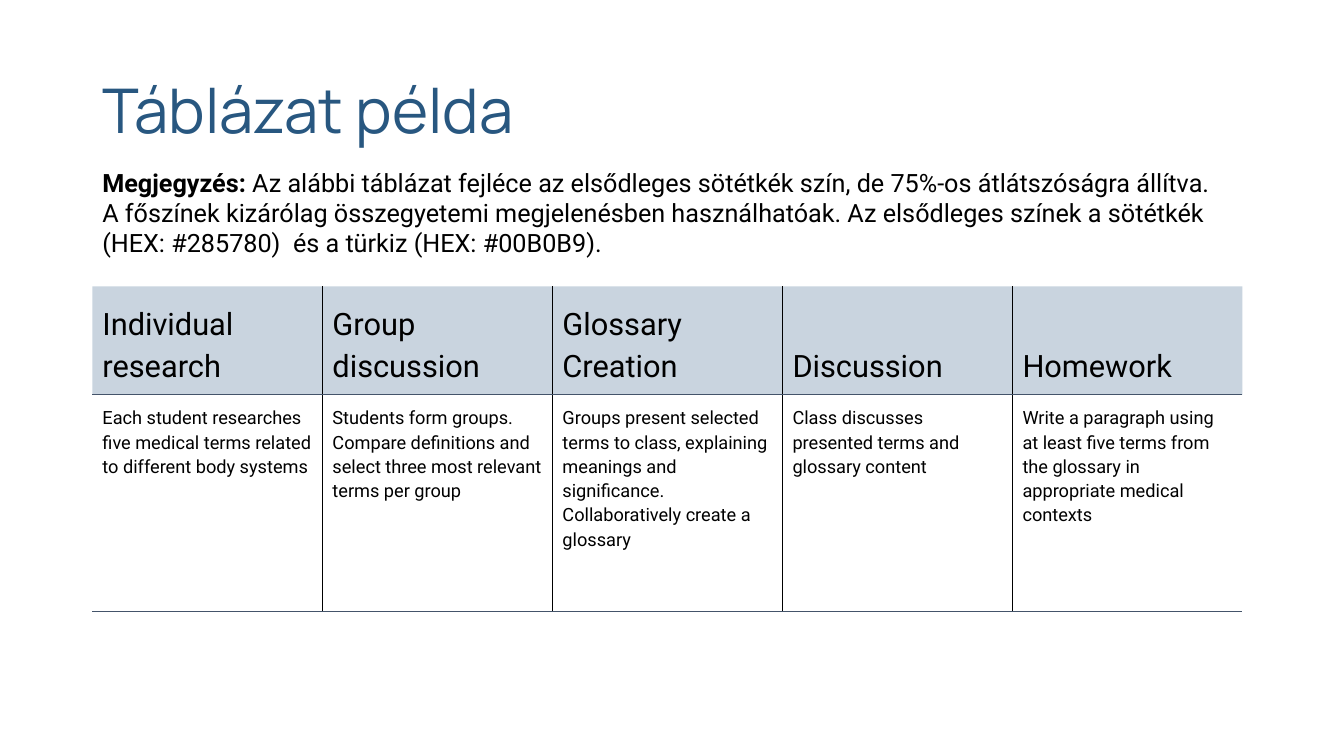
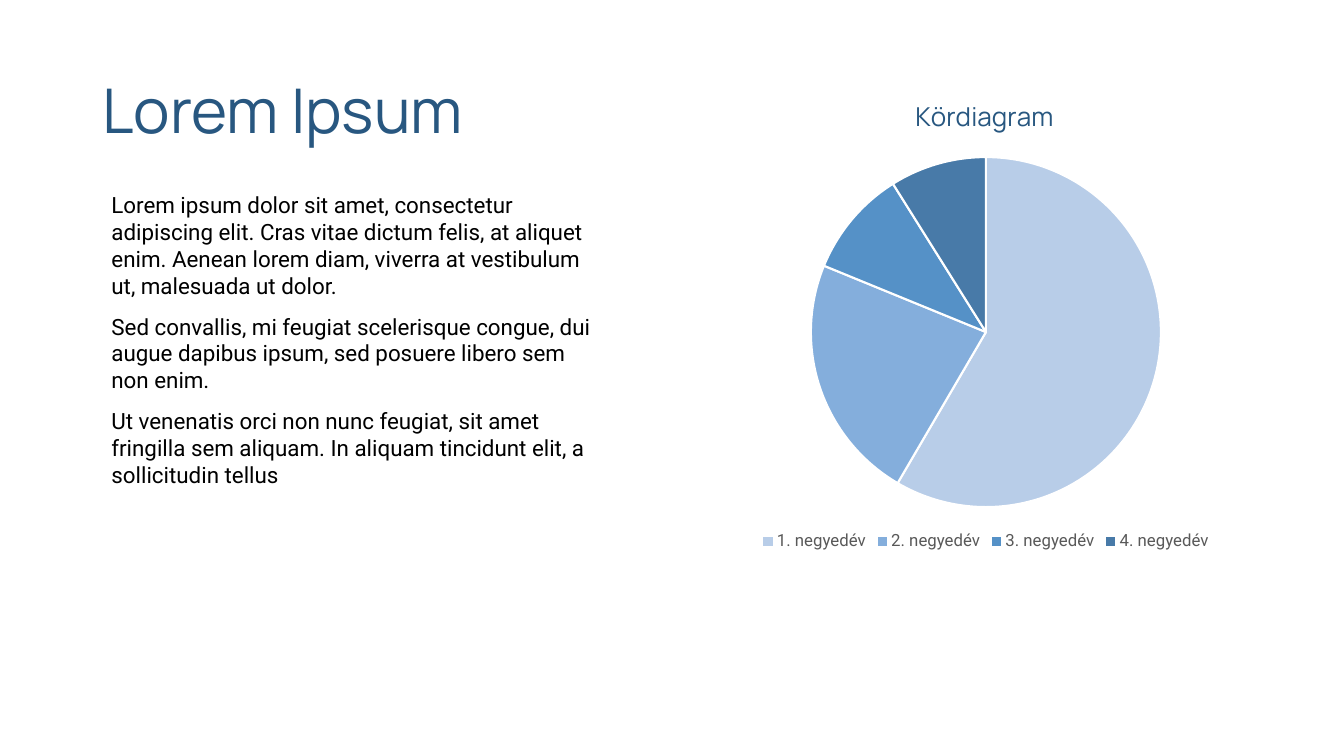
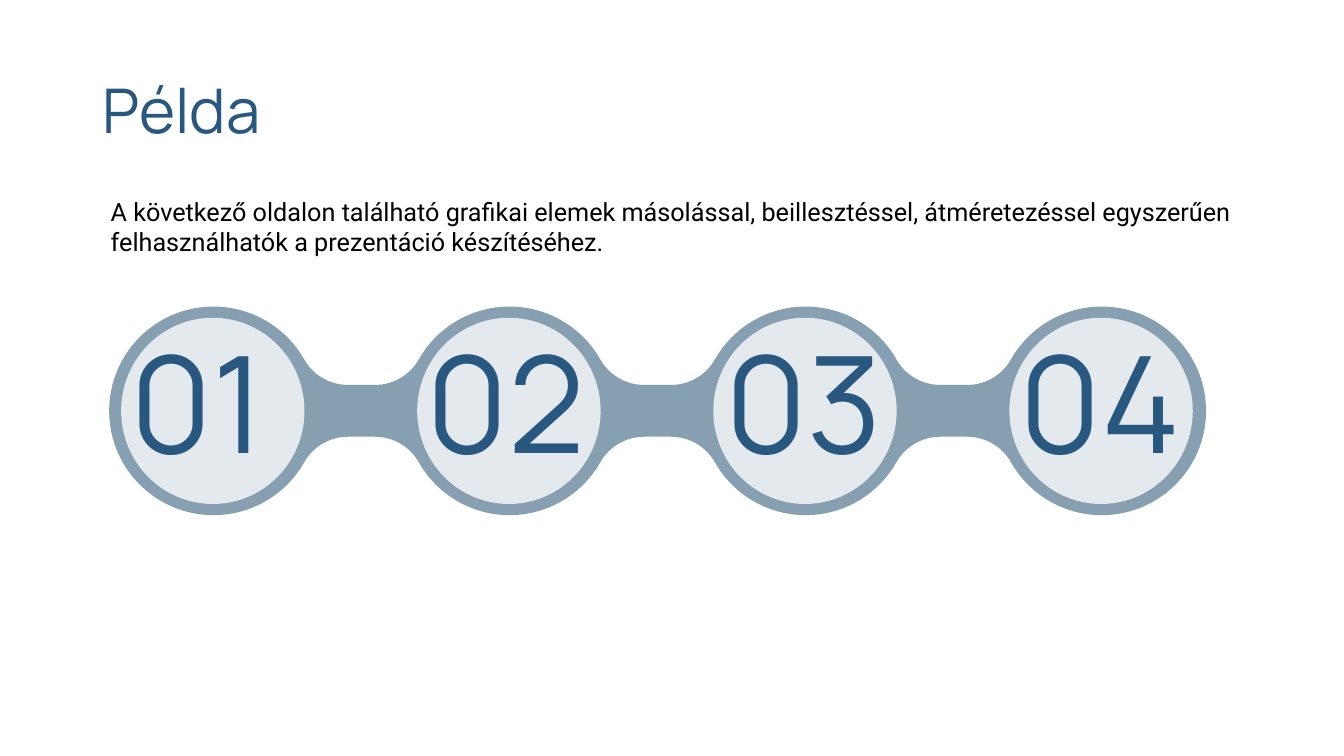
from dataclasses import dataclass
from math import atan2, cos, degrees, radians, sin, sqrt, tan

from lxml.etree import SubElement
from pptx import Presentation
from pptx.chart.data import CategoryChartData
from pptx.dml.color import RGBColor
from pptx.enum.chart import XL_CHART_TYPE, XL_LEGEND_POSITION
from pptx.enum.shapes import MSO_SHAPE
from pptx.enum.text import MSO_ANCHOR
from pptx.oxml import parse_xml
from pptx.oxml.ns import nsdecls, qn
from pptx.util import Emu, Pt

# Shared style
EMU_PER_PX = 6350
INSET = Pt(7.2)
HEADING_FONT, BODY_FONT = "Manrope", "Roboto"
NAVY, BLACK, WHITE, GREY = "285780", "000000", "FFFFFF", "595959"
RULE, CHAIN, DISC = "44546A", "869FB1", "E3E9ED"
PIE_COLOURS = ["B8CDE8", "84AEDC", "5591C7", "487AA8"]


@dataclass(frozen=True)
class Area:
    left: int
    top: int
    width: int
    height: int

    def emu(self) -> list[Emu]:
        return [px(v) for v in (self.left, self.top, self.width, self.height)]


@dataclass(frozen=True)
class Step:
    heading: str
    details: tuple[str, ...]


TITLE_AREA = Area(132, 58, 1656, 209)

STEPS = [
    Step("Individual research",
         ("Each student researches five medical terms related to different body systems",)),
    Step("Group discussion",
         ("Students form groups.",
          "Compare definitions and select three most relevant terms per group")),
    Step("Glossary Creation",
         ("Groups present selected terms to class, explaining meanings and significance.",
          "Collaboratively create a glossary")),
    Step("Discussion", ("Class discusses presented terms and glossary content",)),
    Step("Homework",
         ("Write a paragraph using at least five terms from the glossary in appropriate "
          "medical contexts",)),
]

NUMBER_AREAS = [
    Area(173, 513, 261, 144),
    Area(595, 514, 289, 144),
    Area(1022, 513, 261, 144),
    Area(1443, 514, 261, 144),
]


def px(value: float) -> Emu:
    return Emu(round(value * EMU_PER_PX))


def colour(value: str) -> RGBColor:
    return RGBColor.from_string(value)


def style_font(font, *, size: float, face: str, ink: str, bold: bool = False) -> None:
    font.size, font.name, font.bold = Pt(size), face, bold
    font.color.rgb = colour(ink)


def write(frame, paragraphs, *, size: float, face: str = BODY_FONT, ink: str = BLACK,
          lead: str = "", spacing: float = 1.0, before: int = 0) -> None:
    """Fill a text frame; lead is a bold opening of the first paragraph."""
    for index, text in enumerate(paragraphs):
        para = frame.add_paragraph() if index else frame.paragraphs[0]
        para.line_spacing = spacing
        para.space_before = Pt(before if index else 0)
        parts = [(text, False)]
        if lead and index == 0:
            parts.insert(0, (lead, True))
        for part, bold in parts:
            span = para.add_run()
            span.text = part
            style_font(span.font, size=size, face=face, ink=ink, bold=bold)


def add_text(page, area: Area, *paragraphs: str, anchor=MSO_ANCHOR.TOP,
             inset: int = INSET, **text_format) -> None:
    frame = page.shapes.add_textbox(*area.emu()).text_frame
    frame.word_wrap = True
    frame.vertical_anchor = anchor
    frame.margin_left = frame.margin_right = INSET
    frame.margin_top = frame.margin_bottom = inset
    write(frame, paragraphs, **text_format)


def add_page(deck, title: str):
    page = deck.slides.add_slide(deck.slide_layouts[6])
    add_text(page, TITLE_AREA, title, size=44, face=HEADING_FONT, ink=NAVY,
             spacing=0.9, anchor=MSO_ANCHOR.MIDDLE, inset=INSET // 2)
    return page


def paint(shape, fill: str) -> None:
    shape.shadow.inherit = False
    shape.fill.solid()
    shape.fill.fore_color.rgb = colour(fill)
    shape.line.fill.background()


# Table
def set_borders(cell, **edges: str | None) -> None:
    """Draw the edges L, R, T, B in the given colours; None hides an edge."""
    properties = cell._tc.get_or_add_tcPr()
    for side in "LRTB":
        line = SubElement(properties, qn(f"a:ln{side}"), w=str(Pt(0.75)))
        ink = edges.get(side)
        if ink is None:
            SubElement(line, qn("a:noFill"))
        else:
            SubElement(SubElement(line, qn("a:solidFill")), qn("a:srgbClr"), val=ink)


def fill_cell(cell, fill: str, opacity: int = 100) -> None:
    cell.fill.solid()
    cell.fill.fore_color.rgb = colour(fill)
    if opacity < 100:
        tint = cell._tc.tcPr.find(qn("a:solidFill")).find(qn("a:srgbClr"))
        SubElement(tint, qn("a:alpha"), val=str(opacity * 1000))


def add_step_table(page) -> None:
    row_heights = (155, 66, 66, 177)
    area = Area(132, 409, 1643, sum(row_heights))
    table = page.shapes.add_table(len(row_heights), len(STEPS), *area.emu()).table
    table.first_row = table.horz_banding = False
    for row, height in zip(table.rows, row_heights):
        row.height = px(height)
    last_row, last_column = len(row_heights) - 1, len(STEPS) - 1
    for column, step in enumerate(STEPS):
        table.columns[column].width = px(area.width / len(STEPS))
        for row in range(len(row_heights)):
            cell = table.cell(row, column)
            cell.margin_left = cell.margin_right = INSET
            cell.margin_top = cell.margin_bottom = INSET
            set_borders(cell,
                        L=BLACK if column else None,
                        R=BLACK if column < last_column else None,
                        T=RULE if row else None,
                        B=RULE)
            fill_cell(cell, WHITE if row else NAVY, 100 if row else 25)
        header, body = table.cell(0, column), table.cell(1, column)
        header.vertical_anchor = MSO_ANCHOR.BOTTOM
        write(header.text_frame, [step.heading], size=22, spacing=1.15)
        body.merge(table.cell(last_row, column))
        write(body.text_frame, step.details, size=13, spacing=1.15)


# Chart
def set_layout(parent, after: str, target: str = "", **fractions: float) -> None:
    """Place a chart part at fractions of the chart area."""
    old = parent.find(qn("c:layout"))
    if old is not None:
        parent.remove(old)
    inner = f'<c:layoutTarget val="{target}"/>' if target else ""
    modes = "".join(f'<c:{key}Mode val="edge"/>' for key in "xy")
    values = "".join(f'<c:{key} val="{value}"/>' for key, value in fractions.items())
    layout = parse_xml(f'<c:layout {nsdecls("c")}><c:manualLayout>{inner}{modes}{values}'
                       "</c:manualLayout></c:layout>")
    if after:
        parent.find(qn(after)).addnext(layout)
    else:
        parent.insert(0, layout)


def add_quarter_pie(page) -> None:
    data = CategoryChartData()
    data.categories = [f"{number}. negyedév" for number in range(1, 5)]
    data.add_series("Series 1", (59, 23, 10, 9))
    area = Area(960, 108, 897, 685)
    chart = page.shapes.add_chart(XL_CHART_TYPE.PIE, *area.emu(), data).chart
    style_font(chart.font, size=10, face="Calibri", ink=BLACK)

    chart.has_title = True
    write(chart.chart_title.text_frame, ["Kördiagram"], size=18.6,
          face=HEADING_FONT, ink=NAVY)
    chart.chart_title.include_in_layout = False
    set_layout(chart.chart_title._element, "c:tx", x=0.38, y=0.03)

    chart.has_legend = True
    chart.legend.position = XL_LEGEND_POSITION.BOTTOM
    chart.legend.include_in_layout = False
    style_font(chart.legend.font, size=12, face=BODY_FONT, ink=GREY)

    plot = chart.plots[0]
    plot.vary_by_categories = True
    set_layout(plot._element.getparent(), "", "inner", x=0.22, y=0.17, w=0.56, h=0.73)
    for index, fill in enumerate(PIE_COLOURS):
        look = plot.series[0].points[index].format
        look.fill.solid()
        look.fill.fore_color.rgb = colour(fill)
        look.line.color.rgb = colour(WHITE)
        look.line.width = Pt(1.5)


# Chain of numbered discs
def arc(x: float, y: float, radius: float, start: float, stop: float):
    """One Bézier arc as four points; degrees run counterclockwise from the right."""
    first, last = radians(start), radians(stop)
    handle = 4 / 3 * tan((last - first) / 4)
    return [(x + radius * (cos(angle) - pull * sin(angle)),
             y - radius * (sin(angle) + pull * cos(angle)))
            for angle, pull in ((first, 0), (first, handle), (last, -handle), (last, 0))]


def join(curve: list, piece: list) -> None:
    """Continue a Bézier curve with a piece, by a straight stretch if they are apart."""
    if curve:
        end, start = curve[-1], piece[0]
        if max(abs(end[0] - start[0]), abs(end[1] - start[1])) > 1:
            curve += [end, start, start]
        piece = piece[1:]
    curve += piece


def add_curve(page, points: list):
    """Draw a closed outline from a start point and three points per Bézier curve."""
    corners = [(px(x), px(y)) for x, y in points]
    builder = page.shapes.build_freeform(*corners[0], scale=1.0)
    builder.add_line_segments(corners[1:], close=True)
    shape = builder.convert_to_shape()
    lines = list(shape._element.iter(qn("a:lnTo")))
    for trio in zip(lines[::3], lines[1::3], lines[2::3]):
        bezier = trio[0].makeelement(qn("a:cubicBezTo"))
        trio[0].addprevious(bezier)
        for line in trio:
            bezier.append(line[0])
            line.getparent().remove(line)
    return shape


def add_chain(page) -> None:
    first_x, middle_y, pitch = 305, 587, 423
    radius, neck, fillet = 149, 37, 72

    # Each fillet touches both a circle and the straight neck
    rise = neck + fillet
    reach = sqrt((radius + fillet) ** 2 - rise ** 2)
    tangent = degrees(atan2(rise, reach))
    upper = []
    last = len(NUMBER_AREAS) - 1
    for index in range(last + 1):
        x = first_x + pitch * index
        if index > 0:
            join(upper, arc(x - reach, middle_y - rise, fillet, 270, 360 - tangent))
        join(upper, arc(x, middle_y, radius, 180 - tangent if index else 180, 90))
        join(upper, arc(x, middle_y, radius, 90, tangent if index < last else 0))
        if index < last:
            join(upper, arc(x + reach, middle_y - rise, fillet, 180 + tangent, 270))
    lower = [(x, 2 * middle_y - y) for x, y in reversed(upper)]
    paint(add_curve(page, upper + lower[1:]), CHAIN)

    for index in range(last + 1):
        area = Area(173 + pitch * index, 454, 262, 266)
        paint(page.shapes.add_shape(MSO_SHAPE.OVAL, *area.emu()), DISC)
    for number, area in enumerate(NUMBER_AREAS, start=1):
        add_text(page, area, f"{number:02}", size=96, face=HEADING_FONT, ink=NAVY,
                 spacing=0.9, anchor=MSO_ANCHOR.MIDDLE)


# Slides
def build_table_page(deck) -> None:
    page = add_page(deck, "Táblázat példa")
    add_text(page, Area(132, 224, 1643, 154),
             "Az alábbi táblázat fejléce az elsődleges sötétkék szín, de 75%-os "
             "átlátszóságra állítva. A főszínek kizárólag összegyetemi megjelenésben "
             "használhatóak. Az elsődleges színek a sötétkék (HEX: #285780)  és a türkiz "
             "(HEX: #00B0B9).",
             lead="Megjegyzés: ", size=18)
    add_step_table(page)


def build_chart_page(deck) -> None:
    page = add_page(deck, "Lorem Ipsum")
    add_quarter_pie(page)
    add_text(page, Area(145, 266, 727, 600),
             "Lorem ipsum dolor sit amet, consectetur adipiscing elit. Cras vitae dictum "
             "felis, at aliquet enim. Aenean lorem diam, viverra at vestibulum ut, "
             "malesuada ut dolor.",
             "Sed convallis, mi feugiat scelerisque congue, dui augue dapibus ipsum, sed "
             "posuere libero sem non enim.",
             "Ut venenatis orci non nunc feugiat, sit amet fringilla sem aliquam. In "
             "aliquam tincidunt elit, a sollicitudin tellus",
             size=16, before=10, inset=INSET // 2)


def build_chain_page(deck) -> None:
    page = add_page(deck, "Példa")
    add_chain(page)
    add_text(page, Area(144, 266, 1682, 145),
             "A következő oldalon található grafikai elemek másolással, beillesztéssel, "
             "átméretezéssel egyszerűen felhasználhatók a prezentáció készítéséhez.",
             size=18)


def main() -> None:
    deck = Presentation()
    deck.slide_width, deck.slide_height = px(1920), px(1080)
    build_table_page(deck)
    build_chart_page(deck)
    build_chain_page(deck)
    deck.save("out.pptx")


if __name__ == "__main__":
    main()
